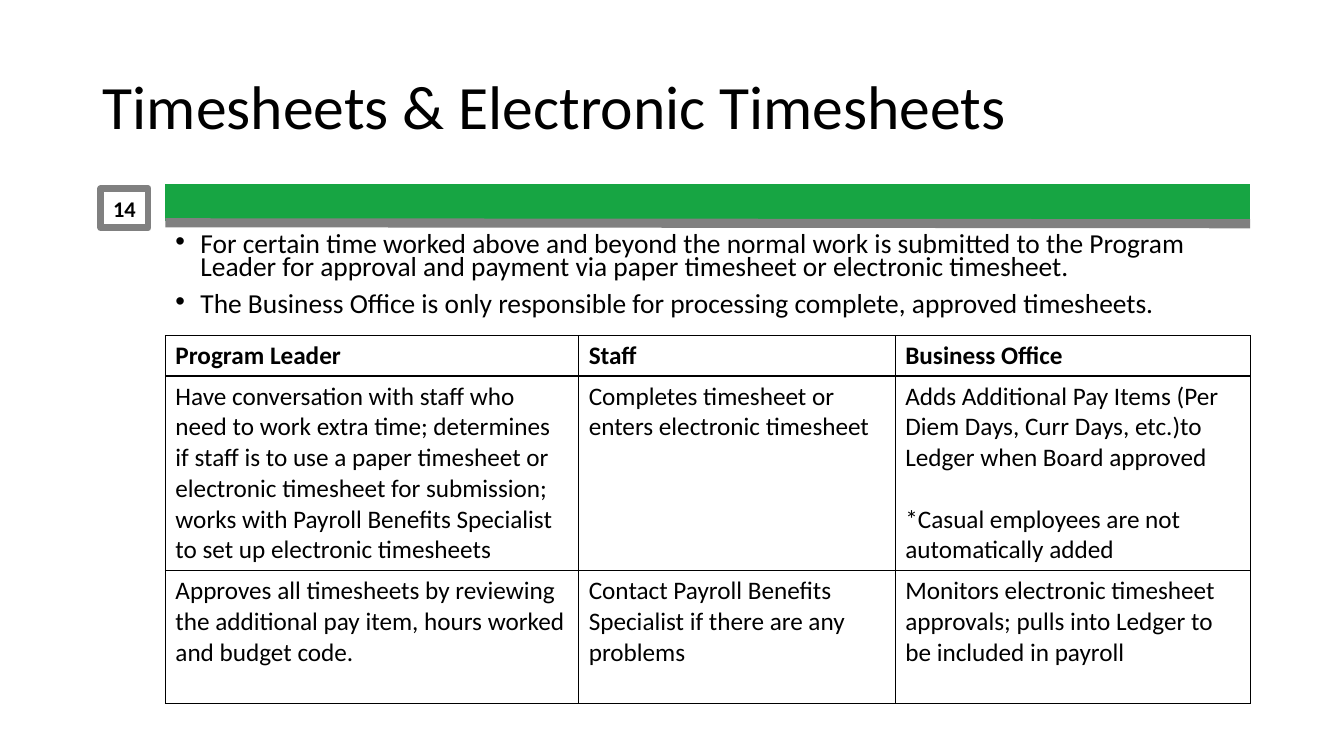
import pptx
import pptx.dml.color
import pptx.enum.shapes
import pptx.enum.text
import pptx.oxml.ns
import pptx.util
from lxml import etree
from pptx.util import Inches

BLACK = pptx.dml.color.RGBColor(0x00, 0x00, 0x00)
WHITE = pptx.dml.color.RGBColor(0xFF, 0xFF, 0xFF)
GREEN = pptx.dml.color.RGBColor(0x17, 0xA5, 0x43)
GREY = pptx.dml.color.RGBColor(0x80, 0x80, 0x80)
LEFT, RIGHT = 1.64, 12.4
qn = pptx.oxml.ns.qn


def add_run(p, text, size, bold=False):
    r = p.add_run()
    r.text = text
    r.font.name = "Calibri"
    r.font.size = pptx.util.Pt(size)
    r.font.bold = bold
    r.font.color.rgb = BLACK


prs = pptx.Presentation()
prs.slide_width, prs.slide_height = Inches(13.33), Inches(7.5)
s = prs.slides.add_slide(prs.slide_layouts[5])

# Title
title = s.shapes.title
title.left, title.top = Inches(0.92), Inches(0.36)
title.width, title.height = Inches(11.5), Inches(1.45)
tf = title.text_frame
tf.auto_size = pptx.enum.text.MSO_AUTO_SIZE.NONE
tf.vertical_anchor = pptx.enum.text.MSO_ANCHOR.MIDDLE
p = tf.paragraphs[0]
p.alignment = pptx.enum.text.PP_ALIGN.LEFT
p.line_spacing = 0.9
add_run(p, "Timesheets & Electronic Timesheets", 44)

# Introductory bullets
intro = s.shapes.add_textbox(Inches(LEFT), Inches(2.28), Inches(10.77), Inches(0.99))
tf = intro.text_frame
tf.word_wrap = True
bullets = [
    "For certain time worked above and beyond the normal work is submitted to the Program "
    "Leader for approval and payment via paper timesheet or electronic timesheet.",
    "The Business Office is only responsible for processing complete, approved timesheets.",
]
for i, text in enumerate(bullets):
    p = tf.add_paragraph() if i else tf.paragraphs[0]
    p.line_spacing = 0.7
    p.space_before = pptx.util.Pt(10)
    pPr = p._p.get_or_add_pPr()
    pPr.set("marL", str(Inches(0.25)))
    pPr.set("indent", str(-Inches(0.25)))
    etree.SubElement(pPr, qn("a:buFont")).set("typeface", "Arial")
    etree.SubElement(pPr, qn("a:buChar")).set("char", "•")
    add_run(p, text, 19.6)

# Divider bars
for y1, y2, color, width in [(2.01, 2.01, GREEN, 26.25), (2.21, 2.22, GREY, 6.5)]:
    bar = s.shapes.add_connector(pptx.enum.shapes.MSO_CONNECTOR.STRAIGHT,
                                 Inches(LEFT), Inches(y1), Inches(RIGHT), Inches(y2))
    bar.line.color.rgb = color
    bar.line.width = pptx.util.Pt(width)
    etree.SubElement(bar._element.spPr, qn("a:effectLst"))

# Slide number box
box = s.shapes.add_shape(pptx.enum.shapes.MSO_SHAPE.RECTANGLE,
                         Inches(1), Inches(1.87), Inches(0.47), Inches(0.39))
box.shadow.inherit = False
box.fill.solid()
box.fill.fore_color.rgb = WHITE
box.line.color.rgb = GREY
box.line.width = pptx.util.Pt(4.75)
tf = box.text_frame
tf.margin_left = tf.margin_right = tf.margin_top = tf.margin_bottom = 0
tf.vertical_anchor = pptx.enum.text.MSO_ANCHOR.MIDDLE
p = tf.paragraphs[0]
p.alignment = pptx.enum.text.PP_ALIGN.CENTER
add_run(p, "14", 16, True)

# Responsibilities table: each cell is a list of paragraphs
rows = [
    [["Program Leader"], ["Staff"], ["Business Office"]],
    [["Have conversation with staff who need to work extra time; determines if staff is to "
      "use a paper timesheet or electronic timesheet for submission; works with Payroll "
      "Benefits Specialist to set up electronic timesheets"],
     ["Completes timesheet or enters electronic timesheet"],
     ["Adds Additional Pay Items (Per Diem Days, Curr Days, etc.)to Ledger when Board approved",
      "*Casual employees are not automatically added"]],
    [["Approves all timesheets by reviewing the additional pay item, hours worked and "
      "budget code."],
     ["Contact Payroll Benefits Specialist if there are any problems"],
     ["Monitors electronic timesheet approvals; pulls into Ledger to be included in payroll"]],
]
col_widths = [4.1, 3.14, 3.52]
row_heights = [0.4, 1.93, 1.32]
table = s.shapes.add_table(len(rows), len(col_widths), Inches(LEFT), Inches(3.33),
                           Inches(sum(col_widths)), Inches(sum(row_heights))).table
table.first_row = table.horz_banding = False
for column, width in zip(table.columns, col_widths):
    column.width = Inches(width)
for i, (row, height) in enumerate(zip(rows, row_heights)):
    table.rows[i].height = Inches(height)
    for j, paragraphs in enumerate(row):
        cell = table.cell(i, j)
        tcPr = cell._tc.get_or_add_tcPr()
        for side in ("a:lnL", "a:lnR", "a:lnT", "a:lnB"):
            ln = etree.SubElement(tcPr, qn(side), w=str(pptx.util.Pt(1)))
            fill = etree.SubElement(ln, qn("a:solidFill"))
            etree.SubElement(fill, qn("a:srgbClr"), val=str(BLACK))
        cell.fill.background()
        for k, text in enumerate(paragraphs):
            p = cell.text_frame.add_paragraph() if k else cell.text_frame.paragraphs[0]
            if k:
                p.space_before = pptx.util.Pt(22)
            add_run(p, text, 18, bold=i == 0)

prs.save("out.pptx")
